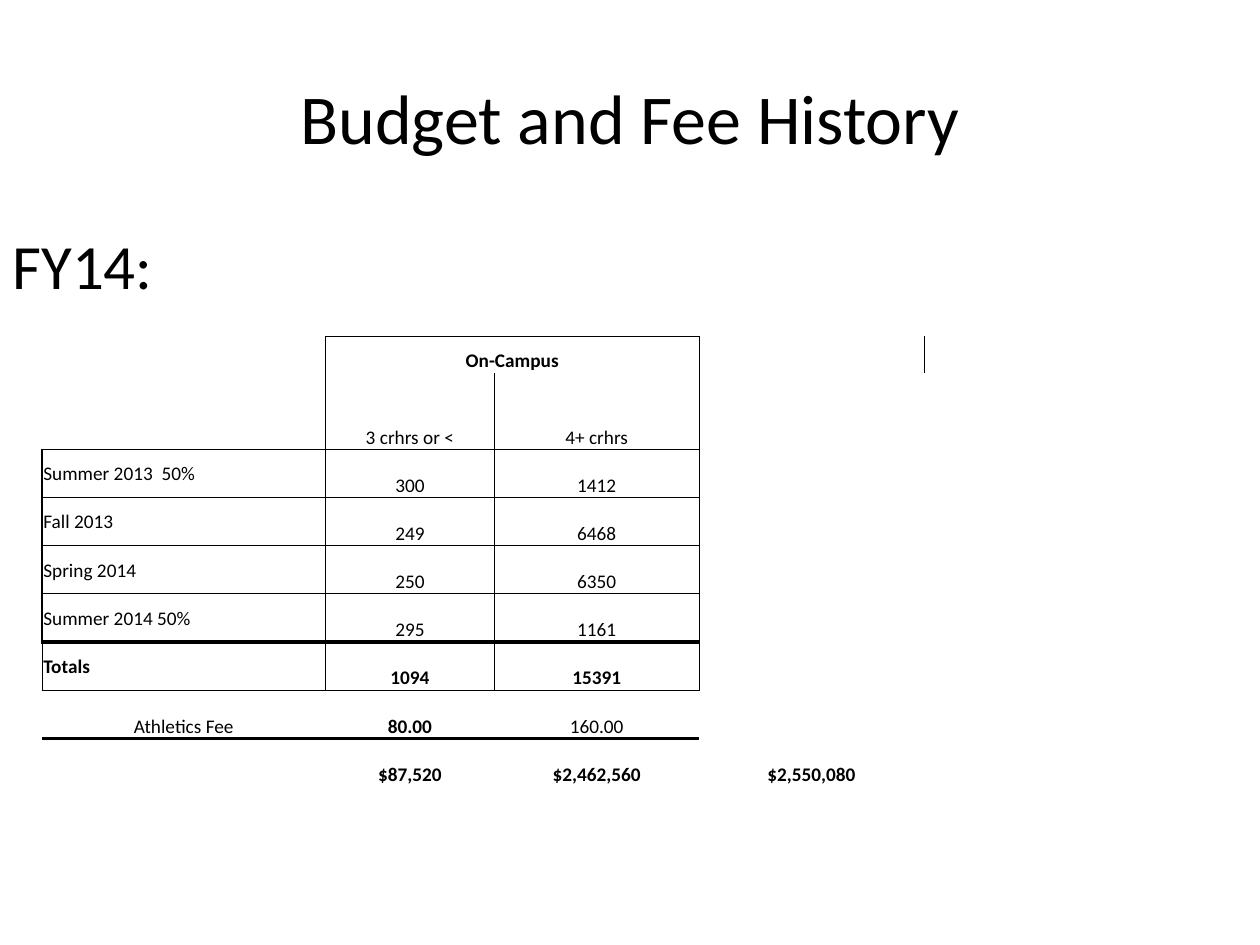
import pptx
import pptx.dml.color
import pptx.enum.text
import pptx.oxml.ns
import pptx.util
from lxml import etree

Pt = pptx.util.Pt
qn = pptx.oxml.ns.qn
ALIGN = pptx.enum.text.PP_ALIGN
ANCHOR = pptx.enum.text.MSO_ANCHOR

COLORS = {"text": "000000", "line": "000000", "background": "FFFFFF"}
FONT = "Calibri"
CELL_SIZE = 11
NO_STYLE = "{2D5ABB26-0587-4C30-8999-92F81FD0307C}"

COL_WIDTHS = [162, 96.5, 117, 128.5]
ROW_HEIGHTS = [20.9, 43.7] + [27.55] * 7
ROWS = [
    ["", "On-Campus", "", ""],
    ["", "3 crhrs or <", "4+ crhrs", ""],
    ["Summer 2013  50%", "300", "1412", ""],
    ["Fall 2013", "249", "6468", ""],
    ["Spring 2014", "250", "6350", ""],
    ["Summer 2014 50%", "295", "1161", ""],
    ["Totals", "1094", "15391", ""],
    ["Athletics Fee", "80.00", "160.00", ""],
    ["", "$87,520", "$2,462,560", "$2,550,080"],
]
BOLD_CELLS = {(0, 1), (7, 1)} | {(r, c) for r in (6, 8) for c in range(4)}
TERM_ROWS = range(2, 7)

# Line widths by grid edge: (edge row, column) and (row, edge column)
H_LINES = {(0, c): 0.5 for c in (1, 2)}
H_LINES |= {(r, c): 2 if r in (6, 8) else 0.5 for r in range(2, 9) for c in range(3)}
V_LINES = {(r, c): 0.5 for r in range(7) for c in (1, 3)}
V_LINES |= {(r, 2): 0.5 for r in TERM_ROWS}
V_LINES |= {(r, 0): 0.5 if r == 6 else 1.5 for r in TERM_ROWS}


def set_format(obj, values):
    for name, value in values.items():
        setattr(obj, name, value)


def write(p, text, size, align, bold=False):
    p.alignment = align
    if not text:
        etree.SubElement(p._p, qn("a:endParaRPr"), sz=str(size * 100))
        return
    r = p.add_run()
    r.text = text
    set_format(r.font, {"name": FONT, "size": Pt(size), "bold": bold})
    r.font.color.rgb = pptx.dml.color.RGBColor.from_string(COLORS["text"])


def add_text(slide, box, text, size, align, anchor):
    tf = slide.shapes.add_textbox(*map(Pt, box)).text_frame
    set_format(tf, {"word_wrap": True, "vertical_anchor": anchor})
    write(tf.paragraphs[0], text, size, align)


def set_borders(cell, row, col):
    right = col + (cell.span_width if cell.is_merge_origin else 1)
    widths = {
        "L": V_LINES.get((row, col)),
        "R": V_LINES.get((row, right)),
        "T": H_LINES.get((row, col)),
        "B": H_LINES.get((row + 1, col)),
    }
    tc_pr = cell._tc.get_or_add_tcPr()
    for side, width in widths.items():
        if width:
            ln = etree.SubElement(tc_pr, qn(f"a:ln{side}"), w=str(Pt(width)))
            fill = etree.SubElement(ln, qn("a:solidFill"))
            etree.SubElement(fill, qn("a:srgbClr"), val=COLORS["line"])


def add_fee_table(slide, left, top):
    table = slide.shapes.add_table(
        len(ROWS), len(COL_WIDTHS), Pt(left), Pt(top),
        Pt(sum(COL_WIDTHS)), Pt(sum(ROW_HEIGHTS))).table
    set_format(table, {"first_row": False, "horz_banding": False})
    table._tbl.tblPr.find(qn("a:tableStyleId")).text = NO_STYLE
    for column, width in zip(table.columns, COL_WIDTHS):
        column.width = Pt(width)
    for row, height in zip(table.rows, ROW_HEIGHTS):
        row.height = Pt(height)
    table.cell(0, 1).merge(table.cell(0, 2))

    for r, texts in enumerate(ROWS):
        for c, text in enumerate(texts):
            cell = table.cell(r, c)
            is_term = c == 0 and r in TERM_ROWS
            set_format(cell, {
                "margin_left": Pt(0.75), "margin_right": Pt(0.75),
                "margin_top": Pt(0.75), "margin_bottom": Pt(0),
                "vertical_anchor": ANCHOR.MIDDLE if is_term else ANCHOR.BOTTOM,
            })
            write(cell.text_frame.paragraphs[0], text, CELL_SIZE,
                  ALIGN.LEFT if is_term else ALIGN.CENTER, (r, c) in BOLD_CELLS)
            set_borders(cell, r, c)
            cell.fill.background()


def main():
    prs = pptx.Presentation()
    set_format(prs, {"slide_width": Pt(720), "slide_height": Pt(540)})
    slide = prs.slides.add_slide(prs.slide_layouts[6])
    bg = slide.background.fill
    bg.solid()
    bg.fore_color.rgb = pptx.dml.color.RGBColor.from_string(COLORS["background"])
    add_text(slide, (36, 21.6, 648, 90), "Budget and Fee History", 40,
             ALIGN.CENTER, ANCHOR.MIDDLE)
    add_text(slide, (0, 126, 630, 356.4), "FY14:", 36, ALIGN.LEFT, ANCHOR.TOP)
    add_fee_table(slide, 24, 192.2)
    prs.save("out.pptx")


if __name__ == "__main__":
    main()
